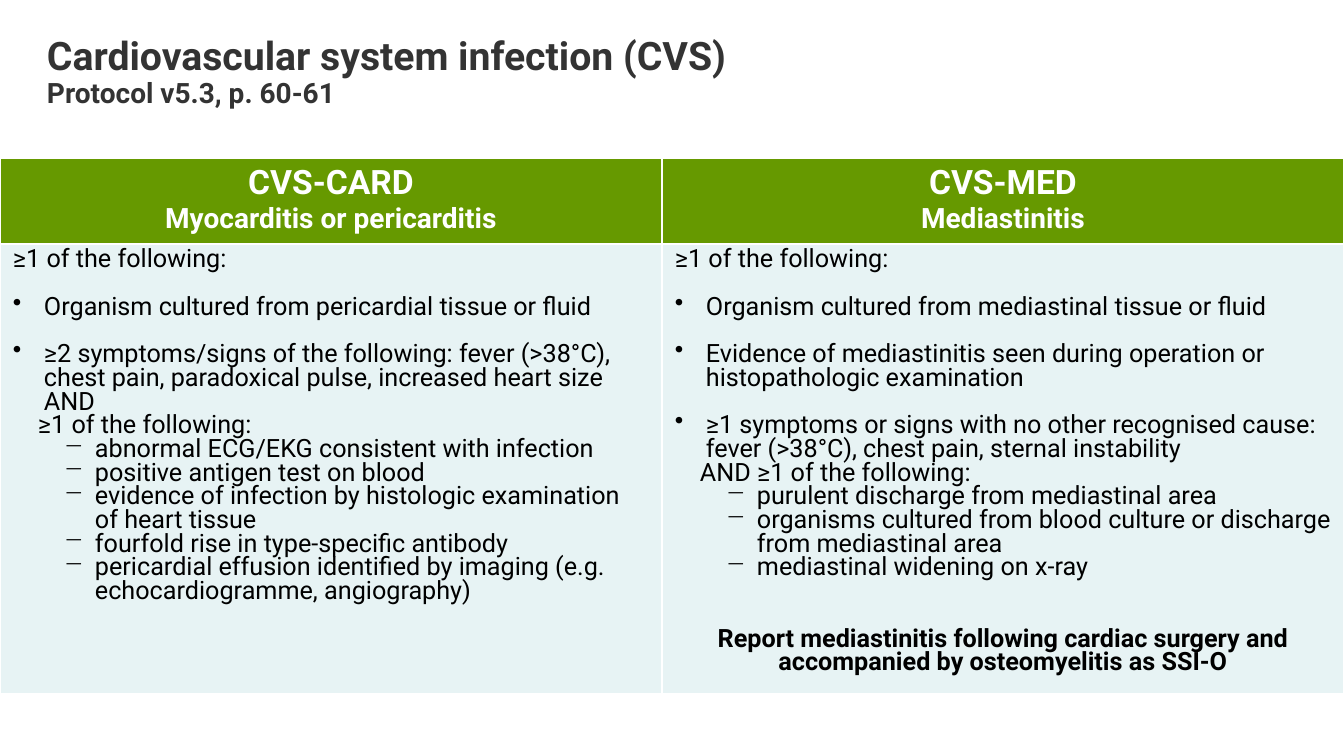
from dataclasses import dataclass

from lxml.etree import SubElement
from pptx import Presentation
from pptx.dml.color import RGBColor
from pptx.enum.text import MSO_ANCHOR, PP_ALIGN
from pptx.oxml.ns import qn
from pptx.util import Pt

# Content
TITLE = ["Cardiovascular system infection (CVS)", "Protocol v5.3, p. 60-61"]
HEADS = [
    ["CVS-CARD", "Myocarditis or pericarditis"],
    ["CVS-MED", "Mediastinitis"],
]
BODIES = [
    [
        ("lead", "≥1 of the following:"),
        ("dot", "Organism cultured from pericardial tissue or fluid"),
        ("dot", "≥2 symptoms/signs of the following: fever (>38°C), chest pain, "
                "paradoxical pulse, increased heart size AND"),
        ("sub", "≥1 of the following:"),
        ("dash", "abnormal ECG/EKG consistent with infection"),
        ("dash", "positive antigen test on blood"),
        ("dash", "evidence of infection by histologic examination of heart tissue"),
        ("dash", "fourfold rise in type-specific antibody"),
        ("dash", "pericardial effusion identified by imaging "
                 "(e.g. echocardiogramme, angiography)"),
    ],
    [
        ("lead", "≥1 of the following:"),
        ("dot", "Organism cultured from mediastinal tissue or fluid"),
        ("dot", "Evidence of mediastinitis seen during operation or "
                "histopathologic examination"),
        ("dot", "≥1 symptoms or signs with no other recognised cause: "
                "fever (>38°C), chest pain, sternal instability"),
        ("sub", "AND ≥1 of the following:"),
        ("dash", "purulent discharge from mediastinal area"),
        ("dash", "organisms cultured from blood culture or discharge "
                 "from mediastinal area"),
        ("dash", "mediastinal widening on x-ray"),
        ("note", "Report mediastinitis following cardiac surgery and "
                 "accompanied by osteomyelitis as SSI-O"),
    ],
]


@dataclass(frozen=True)
class Theme:
    font: str = "Roboto"
    ink: str = "333333"
    black: str = "000000"
    white: str = "FFFFFF"
    green: str = "669900"
    pale: str = "E7F3F4"
    title: int = 28
    head: int = 24
    sub: int = 20
    body: int = 18


@dataclass(frozen=True)
class Style:
    left: int = 0      # px
    hang: int = 0      # px
    mark: str = ""
    gap: int = 0       # pt
    bold: bool = False
    align: PP_ALIGN = PP_ALIGN.LEFT


THEME = Theme()
LINE = 17  # height of one body line, pt
STYLES = {
    "lead": Style(),
    "dot": Style(31, 31, "•", LINE),
    "sub": Style(25),
    "dash": Style(82, 31, "−"),
    "note": Style(gap=3 * LINE - LINE, bold=True, align=PP_ALIGN.CENTER),
}

# Layout in px
WIDE, HIGH = 1344, 756
COLS, ROWS = [662, 682], [86, 450]
TOP = 158


def px(n):
    return round(n * 914400 / 100.8)


def paint(para, size, color, bold):
    for run in para.runs:
        font = run.font
        font.name, font.size, font.bold = THEME.font, Pt(size), bold
        font.color.rgb = RGBColor.from_string(color)


def fill(cell, color, lines):
    cell.fill.solid()
    cell.fill.fore_color.rgb = RGBColor.from_string(color)
    cell.margin_left = cell.margin_right = px(13)
    cell.margin_top = cell.margin_bottom = px(5)
    cell.text_frame.text = "\n".join(lines)
    return cell.text_frame.paragraphs


def shape(para, style):
    props = para._p.get_or_add_pPr()
    props.set("marL", str(px(style.left)))
    props.set("indent", str(-px(style.hang)))
    if style.mark:
        SubElement(props, qn("a:buChar")).set("char", style.mark)
    para.line_spacing = 0.8
    para.alignment = style.align
    if style.gap:
        para.space_before = Pt(style.gap)
    paint(para, THEME.body, THEME.black, style.bold)


def main():
    deck = Presentation()
    deck.slide_width, deck.slide_height = px(WIDE), px(HIGH)
    slide = deck.slides.add_slide(deck.slide_layouts[5])

    # Title
    title = slide.shapes.title
    title.left, title.top, title.width, title.height = map(px, (47, 37, 1137, 88))
    frame = title.text_frame
    frame.text = "\n".join(TITLE)
    frame.word_wrap = True
    frame.vertical_anchor = MSO_ANCHOR.TOP
    frame.margin_left = frame.margin_right = 0
    frame.margin_top = frame.margin_bottom = 0
    for para, size in zip(frame.paragraphs, (THEME.title, THEME.sub)):
        para.alignment = PP_ALIGN.LEFT
        para.line_spacing = 0.9
        paint(para, size, THEME.ink, True)

    # Table grid
    table = slide.shapes.add_table(
        len(ROWS), len(COLS), 0, px(TOP), px(WIDE), px(sum(ROWS))).table
    for row, high in zip(table.rows, ROWS):
        row.height = px(high)

    # Columns: heading above criteria
    for i, (wide, head, body) in enumerate(zip(COLS, HEADS, BODIES)):
        table.columns[i].width = px(wide)
        paras = fill(table.cell(0, i), THEME.green, head)
        for para, size in zip(paras, (THEME.head, THEME.sub)):
            para.alignment = PP_ALIGN.CENTER
            paint(para, size, THEME.white, True)
        paras = fill(table.cell(1, i), THEME.pale, [text for _, text in body])
        for para, (kind, _) in zip(paras, body):
            shape(para, STYLES[kind])

    deck.save("out.pptx")


if __name__ == "__main__":
    main()
